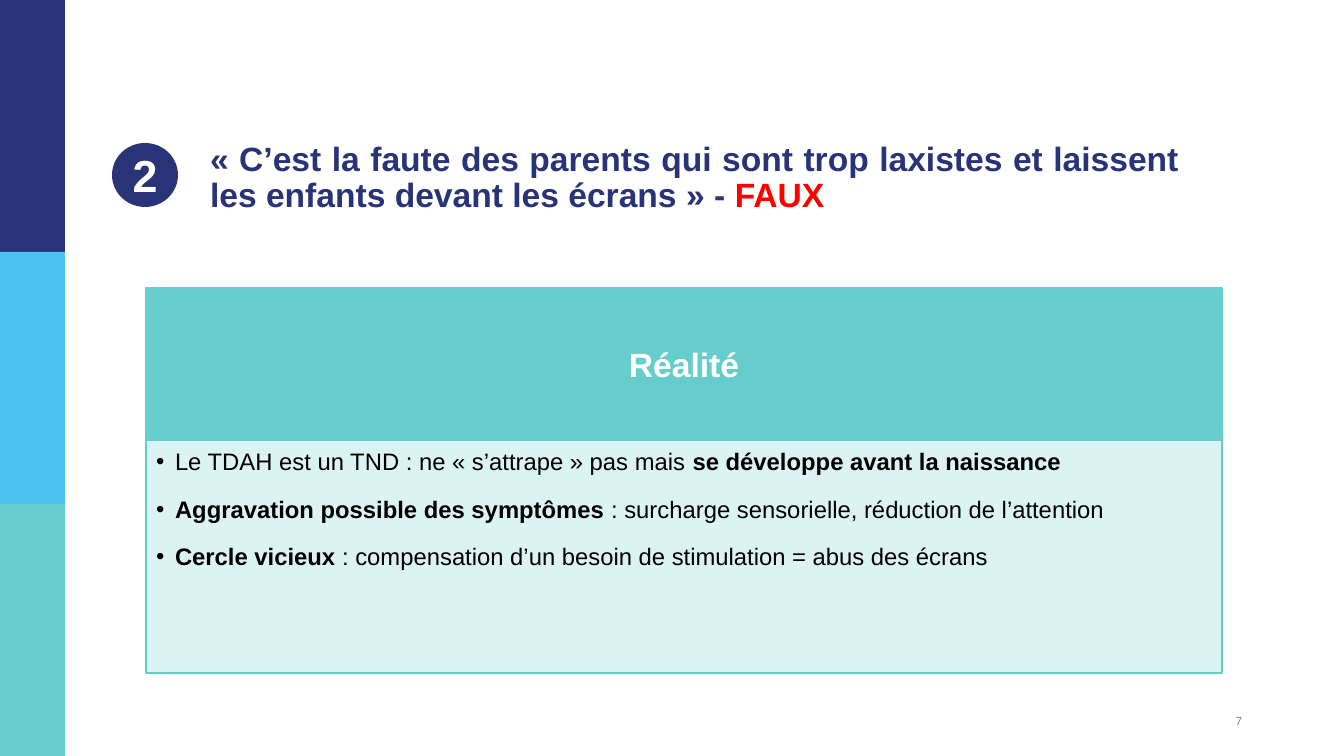
from lxml.etree import SubElement
from pptx import Presentation
from pptx.dml.color import RGBColor
from pptx.enum.shapes import MSO_SHAPE
from pptx.enum.text import MSO_ANCHOR, MSO_AUTO_SIZE, PP_ALIGN
from pptx.oxml.ns import qn
from pptx.util import Emu, Pt

NAVY = RGBColor(0x29, 0x33, 0x77)
SKY = RGBColor(0x4C, 0xC2, 0xF1)
TEAL = RGBColor(0x67, 0xCC, 0xCC)
PALE_TEAL = RGBColor(0xD9, 0xF2, 0xF2)
RED = RGBColor(0xFF, 0x00, 0x00)
GREY = RGBColor(0x88, 0x88, 0x88)
BLACK = RGBColor(0x00, 0x00, 0x00)
WHITE = RGBColor(0xFF, 0xFF, 0xFF)

SLIDE_WIDTH, SLIDE_HEIGHT = 1344, 756
BAND_WIDTH = 65
PANEL_LEFT, PANEL_WIDTH = 146, 1076
BANNER_TOP, BANNER_HEIGHT, LIST_HEIGHT = 288, 152, 233

QUOTE = [
    ("« C’est la faute des parents qui sont trop laxistes et laissent les enfants devant les écrans » - ", {}),
    ("FAUX", {"color": RED}),
]
FACTS = [
    [("Le TDAH est un TND : ne « s’attrape » pas mais ", {}),
     ("se développe avant la naissance", {"bold": True})],
    [("Aggravation possible des symptômes ", {"bold": True}),
     (": surcharge sensorielle, réduction de l’attention", {})],
    [("Cercle vicieux ", {"bold": True}),
     (": compensation d’un besoin de stimulation = abus des écrans", {})],
]


def px(length):
    return Emu(round(length * 914400 / 100.8))


class SlideBuilder:
    """Holds the text style and the current slide, and draws its elements."""

    def __init__(self, presentation):
        self.style = {"name": "Arial", "size": 17, "bold": False, "color": BLACK}
        self.slide = presentation.slides.add_slide(presentation.slide_layouts[1])

    def place(self, shape, box):
        for name, value in zip(("left", "top", "width", "height"), box):
            setattr(shape, name, px(value))

    def paint(self, shape, fill, line=None, line_width=1):
        shape.fill.solid()
        shape.fill.fore_color.rgb = fill
        if line is None:
            shape.line.fill.background()
        else:
            shape.line.color.rgb = line
            shape.line.width = Pt(line_width)

    def fill_text(self, shape, paragraphs, insets=(0, 0, 0, 0), anchor=MSO_ANCHOR.MIDDLE,
                  layout=None, bullet=None, **font):
        frame = shape.text_frame
        settings = {"word_wrap": True, "auto_size": MSO_AUTO_SIZE.NONE, "vertical_anchor": anchor}
        sides = ("margin_left", "margin_top", "margin_right", "margin_bottom")
        settings.update(zip(sides, map(px, insets)))
        for name, value in settings.items():
            setattr(frame, name, value)
        for index, runs in enumerate(paragraphs):
            paragraph = frame.add_paragraph() if index else frame.paragraphs[0]
            if bullet:
                self.add_bullet(paragraph, bullet)
            for name, value in (layout or {}).items():
                setattr(paragraph, name, value)
            for text, changes in runs:
                self.add_run(paragraph, text, {**self.style, **font, **changes})

    def add_run(self, paragraph, text, style):
        run = paragraph.add_run()
        run.text = text
        values = {"name": style["name"], "size": Pt(style["size"]), "bold": style["bold"]}
        for name, value in values.items():
            setattr(run.font, name, value)
        run.font.color.rgb = style["color"]

    def add_bullet(self, paragraph, indent):
        properties = paragraph._p.get_or_add_pPr()
        properties.set("marL", str(px(indent)))
        properties.set("indent", str(-px(indent)))
        color = SubElement(properties, qn("a:buClr"))
        SubElement(color, qn("a:srgbClr"), val=str(BLACK))
        SubElement(properties, qn("a:buFont"), typeface="Arial")
        SubElement(properties, qn("a:buChar"), char="•")

    def add_shape(self, kind, box, fill, line=None):
        shape = self.slide.shapes.add_shape(kind, *map(px, box))
        shape.shadow.inherit = False
        self.paint(shape, fill, line)
        return shape

    def add_title(self, box, runs):
        title = self.slide.shapes.title
        self.place(title, box)
        self.fill_text(title, [runs], (10, 10, 10, 10), MSO_ANCHOR.TOP,
                       {"alignment": PP_ALIGN.JUSTIFY, "line_spacing": 0.9},
                       size=24, bold=True, color=NAVY)

    def add_list(self, box, items):
        body = self.slide.placeholders[1]
        self.place(body, box)
        self.paint(body, PALE_TEAL, TEAL, 1.5)
        fill_color = body._element.spPr.find(qn("a:solidFill"))[0]
        SubElement(fill_color, qn("a:alpha"), val="90000")
        self.fill_text(body, items, (10, 10, 13, 15), MSO_ANCHOR.TOP,
                       {"alignment": PP_ALIGN.LEFT, "line_spacing": 0.9,
                        "space_before": Pt(0), "space_after": Pt(15.6)}, bullet=19)

    def add_label(self, shape, text, **font):
        self.fill_text(shape, [[(text, {})]], layout={"alignment": PP_ALIGN.CENTER}, **font)

    def add_page_number(self, box, text):
        text_box = self.slide.shapes.add_textbox(*map(px, box))
        self.fill_text(text_box, [[(text, {})]], (10, 5, 10, 5),
                       layout={"alignment": PP_ALIGN.RIGHT}, name="Calibri", size=9, color=GREY)


def main():
    presentation = Presentation()
    presentation.slide_width = px(SLIDE_WIDTH)
    presentation.slide_height = px(SLIDE_HEIGHT)
    builder = SlideBuilder(presentation)

    band_height = SLIDE_HEIGHT // 3
    for index, color in enumerate((NAVY, SKY, TEAL)):
        builder.add_shape(MSO_SHAPE.RECTANGLE,
                          (0, index * band_height, BAND_WIDTH, band_height), color)

    badge = builder.add_shape(MSO_SHAPE.OVAL, (112, 143, 66, 64), NAVY)
    builder.add_label(badge, "2", size=32, bold=True, color=WHITE)
    builder.add_title((200, 132, 989, 64), QUOTE)

    banner = builder.add_shape(MSO_SHAPE.RECTANGLE,
                               (PANEL_LEFT, BANNER_TOP, PANEL_WIDTH, BANNER_HEIGHT), TEAL, TEAL)
    builder.add_label(banner, "Réalité", size=24, bold=True, color=WHITE)
    builder.add_list((PANEL_LEFT, BANNER_TOP + BANNER_HEIGHT, PANEL_WIDTH, LIST_HEIGHT), FACTS)

    builder.add_page_number((950, 701, 302, 40), "7")
    presentation.save("out.pptx")


if __name__ == "__main__":
    main()
